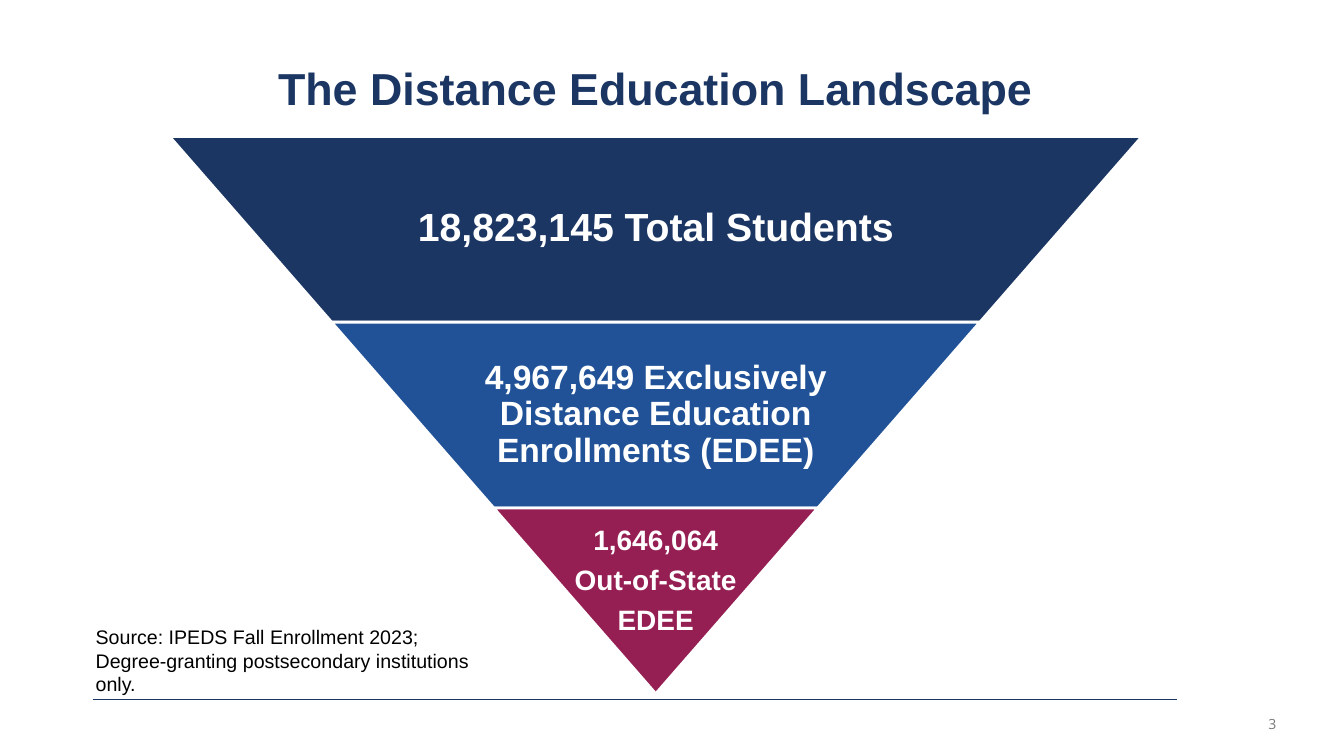
from dataclasses import dataclass

from lxml.etree import SubElement
from pptx import Presentation
from pptx.dml.color import RGBColor
from pptx.enum.shapes import MSO_CONNECTOR, MSO_SHAPE
from pptx.enum.text import MSO_ANCHOR, MSO_AUTO_SIZE, PP_ALIGN
from pptx.oxml.ns import qn
from pptx.slide import Slide
from pptx.text.text import TextFrame, _Paragraph
from pptx.util import Pt

NAVY = RGBColor(0x1B, 0x36, 0x63)
RULE_NAVY = RGBColor(0x19, 0x37, 0x63)
BLUE = RGBColor(0x21, 0x52, 0x97)
CRIMSON = RGBColor(0x95, 0x1F, 0x52)
WHITE = RGBColor(0xFF, 0xFF, 0xFF)
BLACK = RGBColor(0x00, 0x00, 0x00)
GREY = RGBColor(0x78, 0x78, 0x78)

FUNNEL_CENTER = 468.4
FUNNEL_TOP = 97.4
FUNNEL_WIDTH = 694.8
TIER_HEIGHT = 132.7
TIER_SLOPE = 0.873


@dataclass(frozen=True)
class Tier:
    lines: tuple[str, ...]
    size: float
    fill: RGBColor
    text_share: float
    inset: float
    bottom_inset: float


TIERS = (
    Tier(("18,823,145 Total Students",), 28, NAVY, 0.65, 2.8, 2.8),
    Tier(("4,967,649 Exclusively Distance Education Enrollments (EDEE)",),
         24, BLUE, 0.65, 2.4, 2.4),
    Tier(("1,646,064", "Out-of-State", "EDEE"), 20, CRIMSON, 1, 2, 30),
)


def add_run(paragraph: _Paragraph, text: str, size: float, color: RGBColor,
            bold: bool = False, font: str = "Arial") -> None:
    run = paragraph.add_run()
    run.text = text
    run.font.name = font
    run.font.size = Pt(size)
    run.font.bold = bold
    run.font.color.rgb = color


def add_text_area(slide: Slide, left: float, top: float,
                  width: float, height: float) -> TextFrame:
    frame = slide.shapes.add_textbox(
        Pt(left), Pt(top), Pt(width), Pt(height)).text_frame
    frame.word_wrap = True
    return frame


def add_title(slide: Slide) -> None:
    title = slide.shapes.title
    title.left, title.top = Pt(115.9), Pt(43.9)
    title.width, title.height = Pt(704.9), Pt(59)
    frame = title.text_frame
    frame.auto_size = MSO_AUTO_SIZE.NONE
    frame.vertical_anchor = MSO_ANCHOR.TOP
    heading = frame.paragraphs[0]
    heading.alignment = PP_ALIGN.CENTER
    heading.line_spacing = 0.9
    add_run(heading, "The Distance Education Landscape", 32, NAVY, bold=True)


def add_tier(slide: Slide, tier: Tier, index: int) -> None:
    width = FUNNEL_WIDTH * (len(TIERS) - index) / len(TIERS)
    top = FUNNEL_TOP + index * TIER_HEIGHT
    band = slide.shapes.add_shape(
        MSO_SHAPE.TRAPEZOID, Pt(FUNNEL_CENTER - width / 2), Pt(top),
        Pt(width), Pt(TIER_HEIGHT))
    band.adjustments[0] = TIER_SLOPE
    band.rotation = 180
    band.shadow.inherit = False
    band.fill.solid()
    band.fill.fore_color.rgb = tier.fill
    band.line.color.rgb = WHITE
    band.line.width = Pt(2)

    # Upright label over the inverted band
    label_width = width * tier.text_share
    label = add_text_area(slide, FUNNEL_CENTER - label_width / 2, top,
                          label_width, TIER_HEIGHT)
    label.vertical_anchor = MSO_ANCHOR.MIDDLE
    label.margin_left = label.margin_right = label.margin_top = Pt(tier.inset)
    label.margin_bottom = Pt(tier.bottom_inset)
    for number, line in enumerate(tier.lines):
        paragraph = label.add_paragraph() if number else label.paragraphs[0]
        paragraph.alignment = PP_ALIGN.CENTER
        paragraph.line_spacing = 0.9
        if number:
            paragraph.space_before = Pt(7)
        add_run(paragraph, line, tier.size, WHITE, bold=True)


def add_footer(slide: Slide) -> None:
    rule = slide.shapes.add_connector(
        MSO_CONNECTOR.STRAIGHT, Pt(66.2), Pt(499.7), Pt(841), Pt(499.7))
    rule.line.color.rgb = RULE_NAVY
    rule.line.width = Pt(0.75)
    SubElement(rule.element.spPr, qn("a:effectLst"))

    page_number = add_text_area(slide, 702.7, 507.6, 216, 21.6).paragraphs[0]
    page_number.alignment = PP_ALIGN.RIGHT
    add_run(page_number, "3", 10, GREY, font="Open Sans")


def add_source(slide: Slide) -> None:
    source = add_text_area(slide, 61.2, 442.8, 291.6, 58.3)
    source.auto_size = MSO_AUTO_SIZE.SHAPE_TO_FIT_TEXT
    add_run(source.paragraphs[0],
            "Source: IPEDS Fall Enrollment 2023; "
            "Degree-granting postsecondary institutions only.", 14, BLACK)


def main() -> None:
    presentation = Presentation()
    presentation.slide_width, presentation.slide_height = Pt(960), Pt(540)
    title_only = presentation.slide_layouts[5]
    slide = presentation.slides.add_slide(title_only)

    # Rule, page number and title
    add_footer(slide)
    add_title(slide)

    # Inverted pyramid of enrollments
    for index, tier in enumerate(TIERS):
        add_tier(slide, tier, index)

    # Data source
    add_source(slide)
    presentation.save("out.pptx")


if __name__ == "__main__":
    main()
